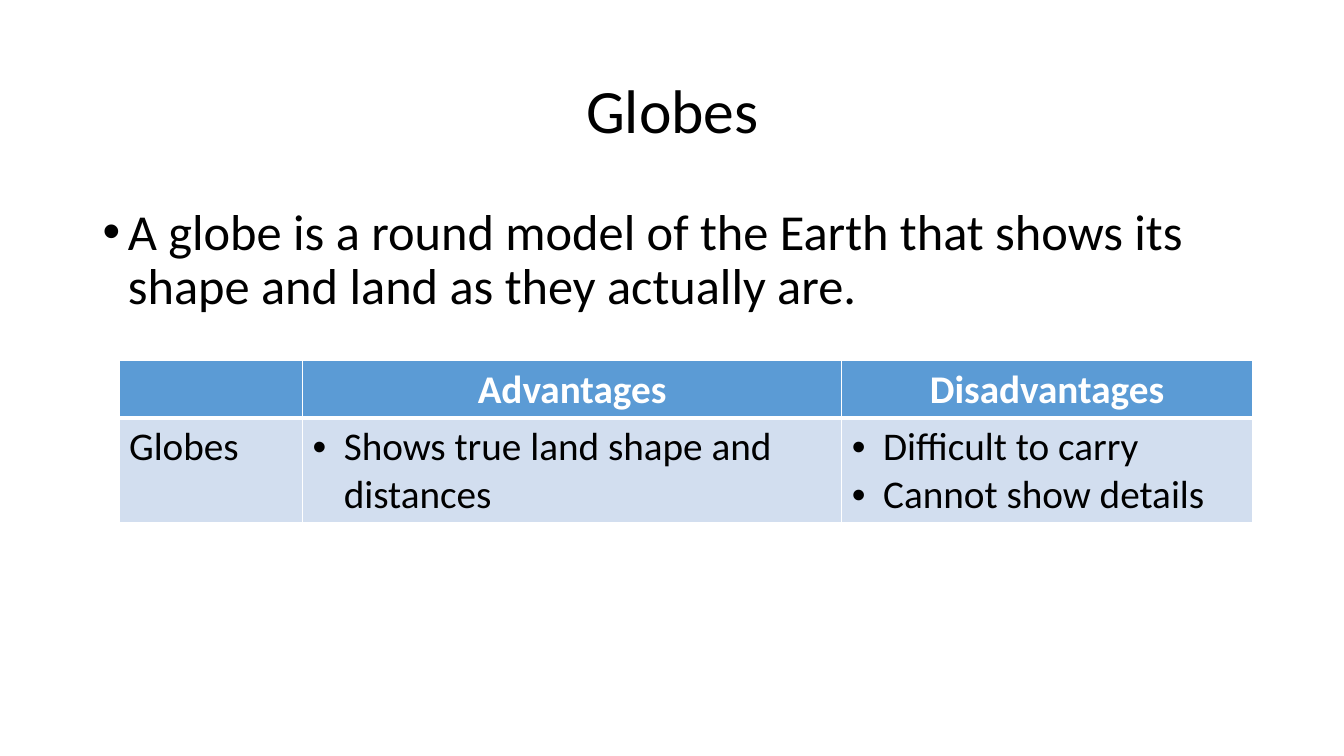
from dataclasses import dataclass

from lxml import etree
from pptx import Presentation
from pptx import util as u
from pptx.dml.color import RGBColor
from pptx.enum import text
from pptx.oxml import ns


@dataclass(frozen=True)
class Theme:
    font: str = "Calibri"
    ink: str = "000000"
    white: str = "FFFFFF"
    header: str = "5B9BD5"
    body: str = "D2DEEF"
    title_size: int = 44
    text_size: int = 36
    table_size: int = 28
    thin: int = 1
    thick: int = 3


THEME = Theme()


def write(p, words, size, color=THEME.ink, bold=False, bullet=0, **layout):
    for name, value in layout.items():
        setattr(p, name, value)
    r = p.add_run()
    r.text = words
    for name, value in {"name": THEME.font, "size": u.Pt(size), "bold": bold}.items():
        setattr(r.font, name, value)
    r.font.color.rgb = RGBColor.from_string(color)
    if bullet:
        indent = u.Inches(bullet)
        pPr = p._p.get_or_add_pPr()
        pPr.set("marL", str(indent))
        pPr.set("indent", str(-indent))
        etree.SubElement(pPr, ns.qn("a:buFont"), typeface="Arial")
        etree.SubElement(pPr, ns.qn("a:buChar"), char="•")


def add_text(s, box, words, size, anchor, **layout):
    tf = s.shapes.add_textbox(*map(u.Inches, box)).text_frame
    tf.word_wrap = True
    tf.vertical_anchor = anchor
    write(tf.paragraphs[0], words, size, line_spacing=0.9, **layout)


def style_cell(cell, fill, top, bottom):
    tcPr = cell._tc.get_or_add_tcPr()
    widths = {"lnL": THEME.thin, "lnR": THEME.thin, "lnT": top, "lnB": bottom}
    for side, width in widths.items():
        ln = etree.SubElement(tcPr, ns.qn("a:" + side), w=str(u.Pt(width)))
        solid = etree.SubElement(ln, ns.qn("a:solidFill"))
        etree.SubElement(solid, ns.qn("a:srgbClr"), val=THEME.white)
    cell.fill.solid()
    cell.fill.fore_color.rgb = RGBColor.from_string(fill)


def add_comparison(s, box, columns, heights, headings, label, points):
    table = s.shapes.add_table(2, len(columns), *map(u.Inches, box)).table
    for column, width in zip(table.columns, columns):
        column.width = u.Inches(width)
    for row, height in zip(table.rows, heights):
        row.height = u.Inches(height)

    for i, heading in enumerate(headings):
        cell = table.cell(0, i)
        style_cell(cell, THEME.header, THEME.thin, THEME.thick)
        if heading:
            write(cell.text_frame.paragraphs[0], heading, THEME.table_size,
                  THEME.white, True, alignment=text.PP_ALIGN.CENTER)

    for i, lines in enumerate([[label], *points]):
        cell = table.cell(1, i)
        style_cell(cell, THEME.body, THEME.thick, THEME.thin)
        tf = cell.text_frame
        for j, line in enumerate(lines):
            p = tf.add_paragraph() if j else tf.paragraphs[0]
            write(p, line, THEME.table_size, bullet=0.31 if i else 0)


def main():
    prs = Presentation()
    prs.slide_width, prs.slide_height = u.Inches(13.33), u.Inches(7.5)
    s = prs.slides.add_slide(prs.slide_layouts[6])
    add_text(s, (0.92, 0.4, 11.5, 1.45), "Globes", THEME.title_size,
             text.MSO_ANCHOR.MIDDLE, alignment=text.PP_ALIGN.CENTER)
    add_text(s, (0.92, 2, 11.5, 4.76),
             "A globe is a round model of the Earth that shows its shape and land "
             "as they actually are.",
             THEME.text_size, text.MSO_ANCHOR.TOP, bullet=0.25, space_before=u.Pt(10))
    add_comparison(s, (1.18, 3.58, 11.24, 1.6), (1.82, 5.35, 4.07), (0.57, 1.03),
                   ("", "Advantages", "Disadvantages"), "Globes",
                   [["Shows true land shape and distances"],
                    ["Difficult to carry", "Cannot show details"]])
    prs.save("out.pptx")


if __name__ == "__main__":
    main()
